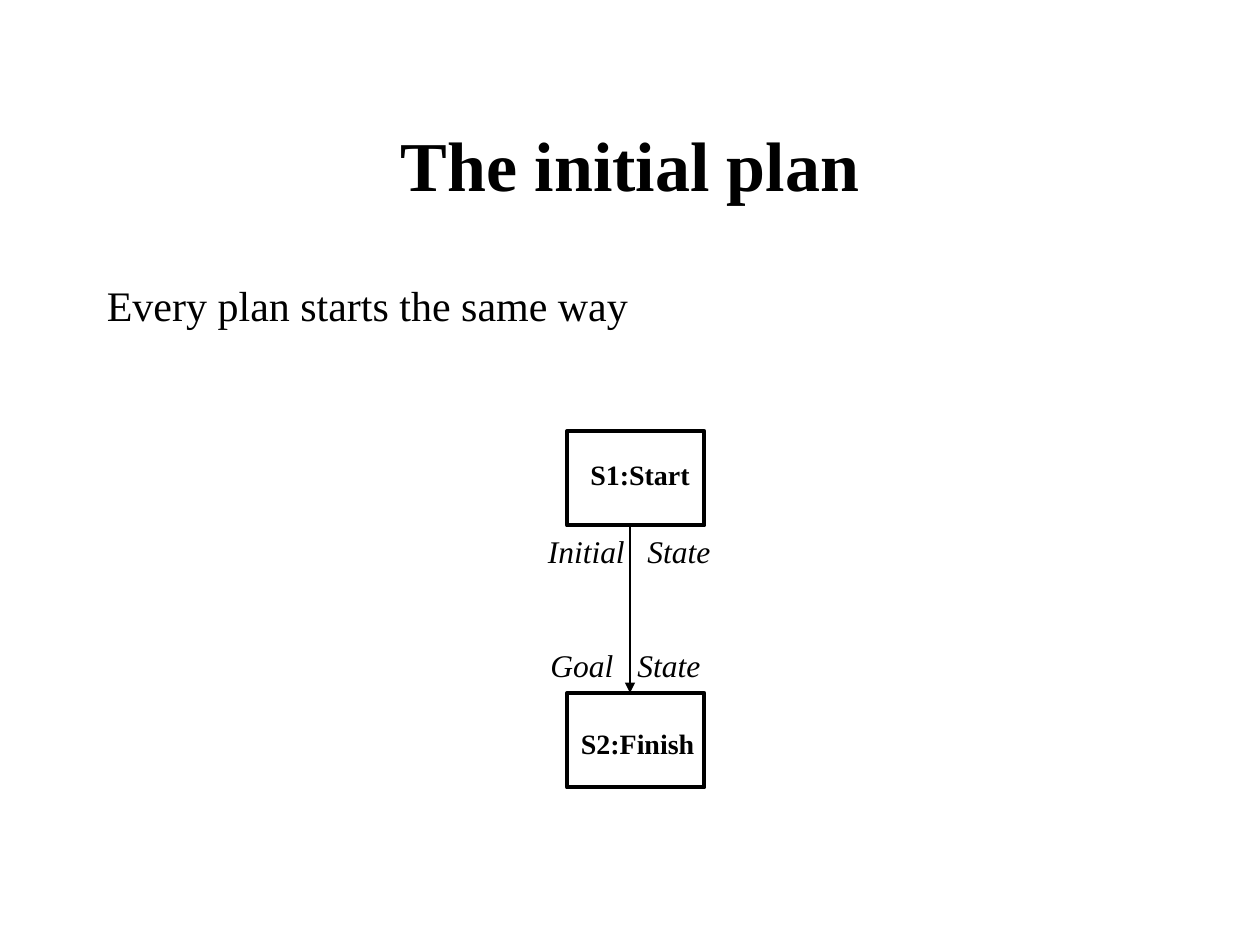
from dataclasses import dataclass

from lxml import etree
from pptx import Presentation
from pptx.dml.color import RGBColor
from pptx.enum.shapes import MSO_CONNECTOR, MSO_SHAPE
from pptx.enum.text import MSO_ANCHOR, PP_ALIGN
from pptx.oxml.ns import qn
from pptx.util import Inches, Pt

STRAIGHT = MSO_CONNECTOR.STRAIGHT
RECTANGLE = MSO_SHAPE.RECTANGLE
TOP, MIDDLE = MSO_ANCHOR.TOP, MSO_ANCHOR.MIDDLE
LEFT, CENTER = PP_ALIGN.LEFT, PP_ALIGN.CENTER


@dataclass(frozen=True)
class Theme:
    font: str = "Times New Roman"
    ink: RGBColor = RGBColor(0, 0, 0)
    title_size: int = 40
    body_size: int = 24
    state_size: int = 18
    step_size: int = 16
    frame_width: float = 2.25
    arrow_width: float = 1


class PlanSlide:
    def __init__(self, page, theme):
        self.page = page
        self.theme = theme

    def text(self, place, words, size, align=LEFT, anchor=TOP,
             bold=False, italic=False, wrap=True):
        box = self.page.shapes.add_textbox(*map(Inches, place))
        frame = box.text_frame
        frame.word_wrap = wrap
        frame.vertical_anchor = anchor
        para = frame.paragraphs[0]
        para.alignment = align
        span = para.add_run()
        span.text = words
        font = span.font
        font.name, font.size = self.theme.font, Pt(size)
        font.bold, font.italic = bold, italic
        font.color.rgb = self.theme.ink
        return para

    def step(self, top, name, label_place):
        frame = self.page.shapes.add_shape(
            RECTANGLE, Inches(4.5), Inches(top), Inches(1.09), Inches(0.75))
        frame.shadow.inherit = False
        frame.fill.background()
        frame.line.color.rgb = self.theme.ink
        frame.line.width = Pt(self.theme.frame_width)
        self.text(label_place, name, self.theme.step_size, CENTER, bold=True)

    def state(self, place, words, gap_stop):
        """Label whose two words sit on either side of the arrow."""
        para = self.text(place, "\t".join(words), self.theme.state_size,
                         italic=True)
        stops = etree.SubElement(para._p.get_or_add_pPr(), qn("a:tabLst"))
        etree.SubElement(stops, qn("a:tab"), pos=str(Inches(gap_stop)), algn="l")

    def arrow(self, start, end):
        line = self.page.shapes.add_connector(
            STRAIGHT, *map(Inches, (*start, *end)))
        line.line.color.rgb = self.theme.ink
        line.line.width = Pt(self.theme.arrow_width)
        etree.SubElement(line.line._get_or_add_ln(), qn("a:tailEnd"),
                         type="triangle")
        etree.SubElement(line._element.spPr, qn("a:effectLst"))


def main():
    deck = Presentation()
    deck.slide_width, deck.slide_height = Inches(10), Inches(7.5)
    theme = Theme()
    plan = PlanSlide(deck.slides.add_slide(deck.slide_layouts[6]), theme)

    plan.text((0.75, 0.67, 8.5, 1.25), "The initial plan", theme.title_size,
              CENTER, MIDDLE, bold=True)
    plan.text((0.75, 2.17, 8.5, 0.67), "Every plan starts the same way",
              theme.body_size)

    plan.step(3.42, "S1:Start", (4.58, 3.58, 1, 0.37))
    plan.step(5.5, "S2:Finish", (4.5, 5.72, 1.12, 0.37))
    plan.state((4.25, 4.17, 1.5, 0.4), ("Initial", "State"), 0.79)
    plan.state((4.27, 5.08, 1.39, 0.4), ("Goal", "State"), 0.69)
    plan.arrow((5, 4.17), (5, 5.5))

    deck.save("out.pptx")


if __name__ == "__main__":
    main()
